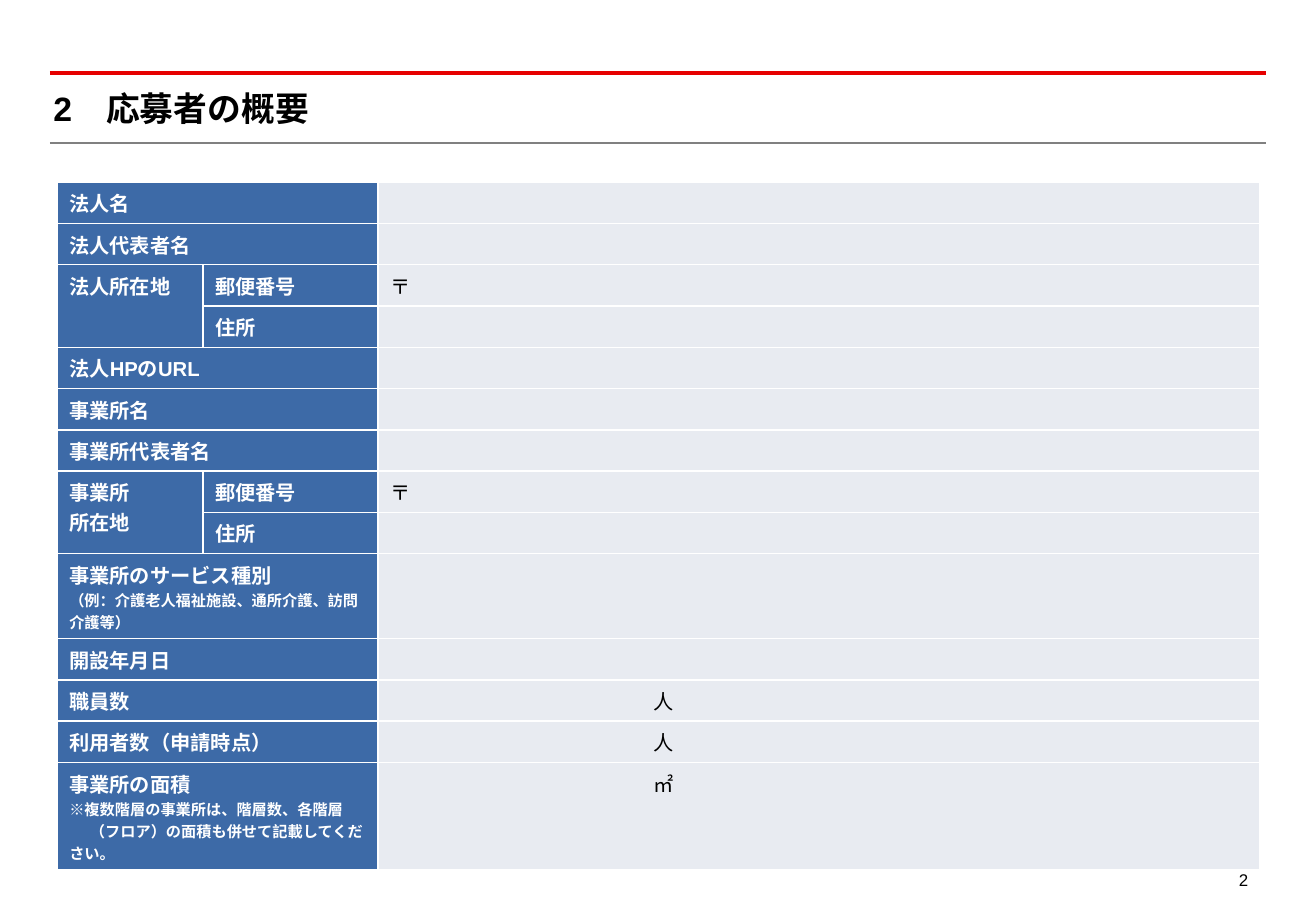
from pptx import Presentation
from pptx.dml.color import RGBColor
from pptx.enum.shapes import MSO_CONNECTOR
from pptx.enum.text import MSO_ANCHOR, PP_ALIGN
from pptx.oxml.ns import qn
from pptx.util import Inches, Pt
from lxml.etree import SubElement

FONT = "Arial"
BLACK, WHITE = "000000", "FFFFFF"
RED, GREY = "E60000", "808080"
LABEL_FILL, ENTRY_FILL = "3D6AA7", "E8EBF1"
LABEL = {"size": Pt(12), "bold": True, "color": WHITE}
HINT = {**LABEL, "size": Pt(9)}
ENTRY = {"size": Pt(12), "bold": False, "color": BLACK}
UNIT_INDENT = 2.27
HINT_INDENT = 0.17

COLUMNS = [1.2, 1.44, 7.26]
ROW_HEIGHT = 0.34
TALL_ROWS = {9: 0.7, 13: 0.88}

ROWS = [
    (["法人名"], None, ""),
    (["法人代表者名"], None, ""),
    (["法人所在地"], "郵便番号", "〒"),
    ([], "住所", ""),
    (["法人HPのURL"], None, ""),
    (["事業所名"], None, ""),
    (["事業所代表者名"], None, ""),
    (["事業所", "所在地"], "郵便番号", "〒"),
    ([], "住所", ""),
    (["事業所のサービス種別"], None, ""),
    (["開設年月日"], None, ""),
    (["職員数"], None, "人"),
    (["利用者数（申請時点）"], None, "人"),
    (["事業所の面積"], None, "㎡"),
]
HINTS = {
    9: [("（例：介護老人福祉施設、通所介護、訪問介護等）", 0)],
    13: [
        ("※複数階層の事業所は、階層数、各階層", 0),
        ("（フロア）の面積も併せて記載してください。", HINT_INDENT),
    ],
}


def color(value):
    return RGBColor.from_string(value)


def style_font(font, values):
    for name, value in {"name": FONT, **values}.items():
        if name == "color":
            font.color.rgb = color(value)
        else:
            setattr(font, name, value)


def write_lines(frame, lines):
    for index, (text, values, indent) in enumerate(lines):
        para = frame.paragraphs[0] if index == 0 else frame.add_paragraph()
        if indent:
            para._p.get_or_add_pPr().set("indent", str(Inches(indent)))
        span = para.add_run()
        span.text = text
        style_font(span.font, values)


def add_text(page, box, text, values, frame_values):
    frame = page.shapes.add_textbox(*map(Inches, box)).text_frame
    for name, value in frame_values.items():
        setattr(frame, name, value)
    write_lines(frame, [(text, values, 0)])
    return frame.paragraphs[0]


def add_rule(page, left, top, width, stroke, weight):
    rule = page.shapes.add_connector(
        MSO_CONNECTOR.STRAIGHT,
        Inches(left), Inches(top), Inches(left + width), Inches(top),
    )
    rule.line.color.rgb = color(stroke)
    rule.line.width = Pt(weight)
    SubElement(rule._element.spPr, qn("a:effectLst"))


def add_heading(page, left, top, width, height):
    add_rule(page, left, top, width, RED, 2)
    add_rule(page, left, top + height, width, GREY, 1.25)
    margins = {f"margin_{side}": 0 for side in ("left", "top", "right", "bottom")}
    add_text(
        page, (left + 0.03, top + 0.12, width - 0.1, 0.34), "2　応募者の概要",
        {"size": Pt(20), "bold": True, "color": BLACK},
        {**margins, "word_wrap": True, "vertical_anchor": MSO_ANCHOR.MIDDLE},
    )


def add_borders(cell):
    properties = cell._tc.get_or_add_tcPr()
    for position, side in enumerate(("a:lnL", "a:lnR", "a:lnT", "a:lnB")):
        border = properties.makeelement(qn(side), {"w": str(Pt(1))})
        fill = SubElement(border, qn("a:solidFill"))
        SubElement(fill, qn("a:srgbClr"), val=WHITE)
        properties.insert(position, border)


def fill_cell(cell, fill, lines):
    cell.fill.solid()
    cell.fill.fore_color.rgb = color(fill)
    add_borders(cell)
    if lines:
        write_lines(cell.text_frame, lines)
    else:
        para = cell.text_frame.paragraphs[0]
        SubElement(para._p, qn("a:endParaRPr"), sz="1200")


def add_profile_table(page, left, top):
    heights = [TALL_ROWS.get(index, ROW_HEIGHT) for index in range(len(ROWS))]
    box = (left, top, sum(COLUMNS), sum(heights))
    table = page.shapes.add_table(
        len(ROWS), len(COLUMNS), *map(Inches, box)
    ).table
    table.first_row = table.horz_banding = False
    for column, width in zip(table.columns, COLUMNS):
        column.width = Inches(width)
    for row, height in zip(table.rows, heights):
        row.height = Inches(height)

    for index, (labels, part, entry) in enumerate(ROWS):
        label_cell, part_cell, entry_cell = table.rows[index].cells
        lines = [(label, LABEL, 0) for label in labels]
        lines += [(hint, HINT, indent) for hint, indent in HINTS.get(index, [])]
        fill_cell(label_cell, LABEL_FILL, lines)
        fill_cell(part_cell, LABEL_FILL, [(part, LABEL, 0)] if part else [])
        fill_cell(entry_cell, ENTRY_FILL, [(entry, ENTRY, 0)] if entry else [])
        if entry in ("人", "㎡"):
            entry_cell.margin_left = Inches(UNIT_INDENT)
        if part is None:
            label_cell.merge(part_cell)
        elif not labels:
            table.cell(index - 1, 0).merge(label_cell)


def add_page_number(page, left, top, width, height):
    para = add_text(
        page, (left, top, width, height), "2",
        {"size": Pt(10), "color": BLACK}, {"word_wrap": True},
    )
    para.alignment = PP_ALIGN.RIGHT
    para.line_spacing = 1.2


def main():
    deck = Presentation()
    deck.slide_width, deck.slide_height = Inches(10.83), Inches(7.5)
    page = deck.slides.add_slide(deck.slide_layouts[6])
    add_page_number(page, 9.93, 7.08, 0.44, 0.28)
    add_heading(page, 0.41, 0.6, 10.01, 0.58)
    add_profile_table(page, 0.47, 1.5)
    deck.save("out.pptx")


if __name__ == "__main__":
    main()
